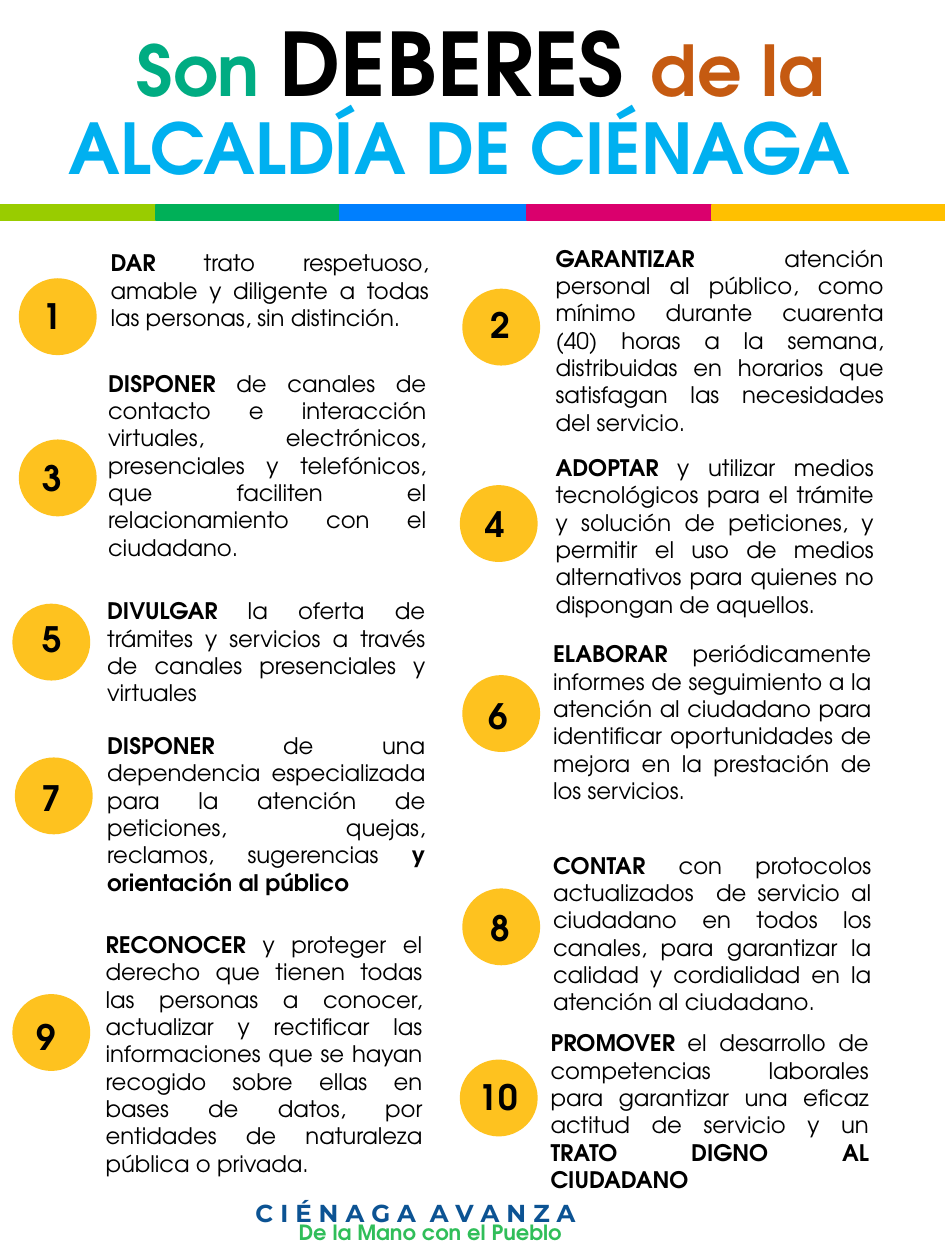
from dataclasses import dataclass

from pptx import Presentation
from pptx import util as u
from pptx.dml.color import RGBColor
from pptx.enum import shapes, text

HEADING_FONT = "TeX Gyre Adventor"
FOOTER_FONT = "Montserrat"
BLACK = "000000"
CIRCLE_COLOR = "FEC21F"
CIRCLE_WIDTH, CIRCLE_HEIGHT = 1.57, 1.55
NUMBER_HEIGHT = 1.12
STRIPE_TOP, STRIPE_HEIGHT = 4.14, 0.3


@dataclass(frozen=True)
class Box:
    left: float
    top: float
    width: float
    height: float

    def lengths(self) -> tuple[u.Length, ...]:
        return tuple(u.Cm(value) for value in (self.left, self.top, self.width, self.height))


@dataclass(frozen=True)
class Span:
    words: str
    size: int
    color: str = BLACK
    bold: bool = True
    font: str = HEADING_FONT


@dataclass(frozen=True)
class Duty:
    circle: tuple[float, float]
    number: tuple[float, float, float]
    body: Box
    verb: str
    detail: str
    emphasis: str = ""


@dataclass(frozen=True)
class Stripe:
    left: float
    width: float
    color: str


DUTIES = [
    Duty((0.38, 5.61), (0.61, 5.82, 1.32), Box(1.98, 4.9, 6.91, 1.93), "DAR",
         " trato respetuoso, amable y diligente a todas las personas, sin distinción."),
    Duty((9.32, 5.82), (9.63, 5.99, 1.45), Box(10.95, 4.8, 7.11, 4.14), "GARANTIZAR",
         " atención personal al público, como mínimo durante cuarenta (40) horas a la semana, "
         "distribuidas en horarios que satisfagan las necesidades del servicio."),
    Duty((0.38, 8.86), (0.61, 9.07, 3), Box(1.93, 7.32, 6.91, 4.14), "DISPONER",
         " de canales de contacto e interacción virtuales, electrónicos, presenciales y "
         "telefónicos, que faciliten el relacionamiento con el ciudadano."),
    Duty((9.27, 9.78), (9.53, 10.01, 1.45), Box(10.95, 9.02, 6.91, 3.58), "ADOPTAR",
         " y utilizar medios tecnológicos para el trámite y solución de peticiones, y permitir "
         "el uso de medios alternativos para quienes no dispongan de aquellos."),
    Duty((0.25, 12.17), (0.61, 12.32, 3), Box(1.91, 11.91, 6.91, 2.49), "DIVULGAR",
         " la oferta de trámites y servicios a través de canales presenciales y virtuales"),
    Duty((9.32, 13.61), (9.6, 13.87, 1.45), Box(10.9, 12.78, 6.91, 4.14), "ELABORAR",
         " periódicamente informes de seguimiento a la atención al ciudadano para identificar "
         "oportunidades de mejora en la prestación de los servicios."),
    Duty((0.3, 15.27), (0.58, 15.52, 3), Box(1.91, 14.63, 6.91, 3.58), "DISPONER",
         " de una dependencia especializada para la atención de peticiones, quejas, reclamos, "
         "sugerencias ", "y orientación al público"),
    Duty((9.32, 17.91), (9.63, 18.14, 1.45), Box(10.9, 17.04, 6.91, 3.58), "CONTAR",
         " con protocolos actualizados  de servicio al ciudadano en todos los canales, para "
         "garantizar la calidad y cordialidad en la atención al ciudadano."),
    Duty((0.25, 20.04), (0.48, 20.35, 3), Box(1.88, 18.64, 6.88, 5.26), "RECONOCER",
         " y proteger el derecho que tienen todas las personas a conocer, actualizar y "
         "rectificar las informaciones que se hayan recogido sobre ellas en bases de datos, "
         "por entidades de naturaleza pública o privada."),
    Duty((9.27, 21.36), (9.4, 21.56, 2.13), Box(10.85, 20.62, 6.91, 3.58), "PROMOVER",
         " el desarrollo de competencias laborales para garantizar una eficaz actitud de "
         "servicio y un ", "TRATO DIGNO AL CIUDADANO"),
]

STRIPES = [
    Stripe(0, 5.77, "99CC00"),
    Stripe(3.15, 5.77, "00B058"),
    Stripe(6.86, 5.77, "007FFE"),
    Stripe(10.62, 4.67, "DA006D"),
    Stripe(14.35, 4.7, "FFC000"),
]

BANNERS = [
    (Box(2.51, -0.08, 16.54, 3.12),
     [Span("Son ", 40, "00AC82"), Span("DEBERES", 50), Span(" ", 54, "00B0F0"),
      Span("de la", 40, "C55A11")]),
    (Box(1.14, 1.98, 19.41, 2.51), [Span("ALCALDÍA DE CIÉNAGA", 40, "00B0F0")]),
    (Box(4.9, 24.03, 16.1, 0.86),
     [Span("C I É N A G A  A V A N Z A", 14, "0C5393", font=FOOTER_FONT)]),
    (Box(5.77, 24.46, 11.33, 0.76), [Span("De la Mano con el Pueblo", 12, "30BE59")]),
]


def color_of(value: str) -> RGBColor:
    return RGBColor.from_string(value)


def add_filled(container, kind: shapes.MSO_SHAPE, box: Box, color: str, outlined: bool) -> None:
    shape = container.add_shape(kind, *box.lengths())
    shape.shadow.inherit = False
    shape.fill.solid()
    shape.fill.fore_color.rgb = color_of(color)
    if outlined:
        shape.line.color.rgb = color_of(color)
        shape.line.width = u.Pt(1)
    else:
        shape.line.fill.background()


def add_text(slide, box: Box, spans: list[Span], justified: bool = False) -> None:
    frame = slide.shapes.add_textbox(*box.lengths()).text_frame
    frame.word_wrap = True
    frame.auto_size = text.MSO_AUTO_SIZE.SHAPE_TO_FIT_TEXT
    paragraph = frame.paragraphs[0]
    paragraph.text = spans[0].words
    for span in spans[1:]:
        paragraph.add_run().text = span.words
    if justified:
        paragraph.alignment = text.PP_ALIGN.JUSTIFY
    for run, span in zip(paragraph.runs, spans):
        run.font.name = span.font
        run.font.size = u.Pt(span.size)
        run.font.bold = span.bold
        run.font.color.rgb = color_of(span.color)


def add_duty(slide, position: int, duty: Duty) -> None:
    circle = Box(*duty.circle, CIRCLE_WIDTH, CIRCLE_HEIGHT)
    add_filled(slide.shapes, shapes.MSO_SHAPE.OVAL, circle, CIRCLE_COLOR, False)
    spans = [Span(duty.verb, 13), Span(duty.detail, 13, bold=False)]
    if duty.emphasis:
        spans.append(Span(duty.emphasis, 13))
    add_text(slide, duty.body, spans, justified=True)
    add_text(slide, Box(*duty.number, NUMBER_HEIGHT), [Span(str(position), 20)])


def main() -> None:
    presentation = Presentation()
    presentation.slide_width = u.Cm(19.05)
    presentation.slide_height = u.Cm(25.4)
    slide = presentation.slides.add_slide(presentation.slide_layouts[6])
    for position, duty in enumerate(DUTIES, start=1):
        add_duty(slide, position, duty)
    stripe_group = slide.shapes.add_group_shape()
    for stripe in STRIPES:
        box = Box(stripe.left, STRIPE_TOP, stripe.width, STRIPE_HEIGHT)
        add_filled(stripe_group.shapes, shapes.MSO_SHAPE.RECTANGLE, box, stripe.color, True)
    for box, spans in BANNERS:
        add_text(slide, box, spans)
    presentation.save("out.pptx")


if __name__ == "__main__":
    main()
